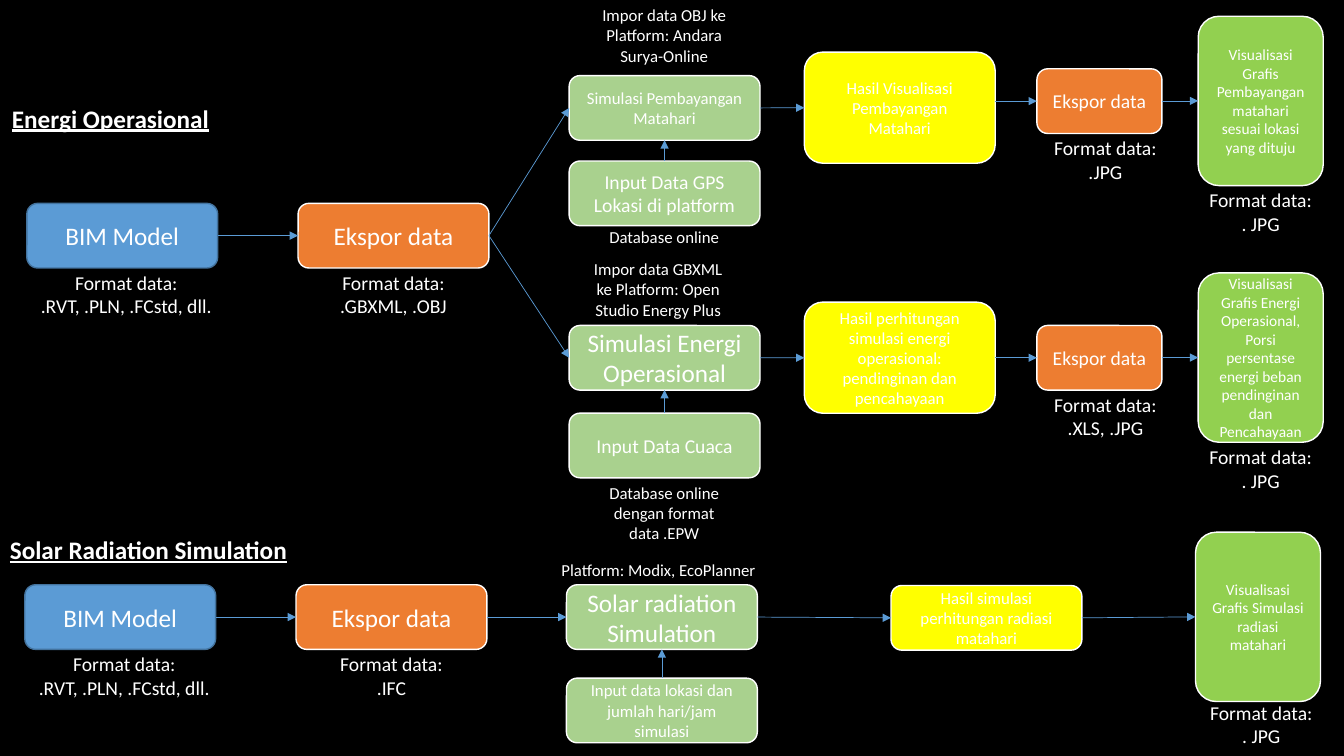
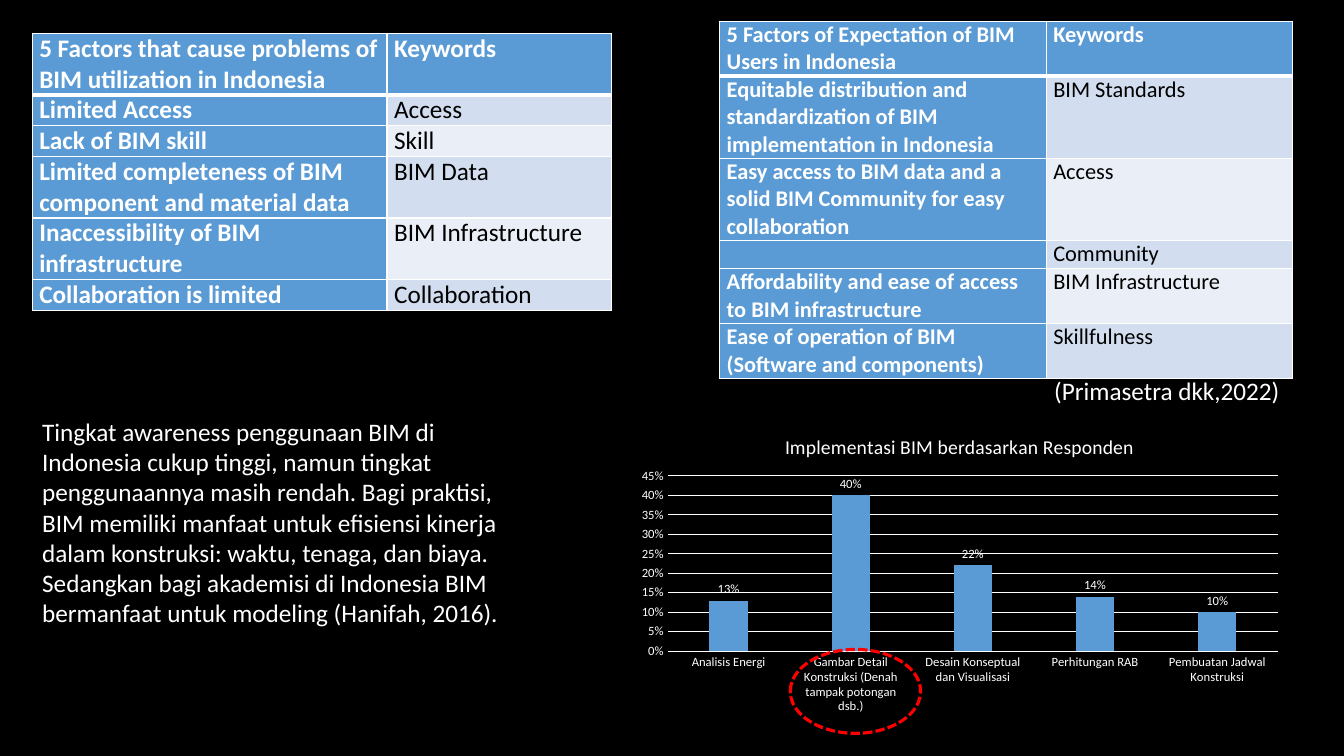
from lxml import etree
from pptx import Presentation
from pptx import util as u
from pptx.chart import data as chart_data
from pptx.dml import color
from pptx.enum import chart as charts, dml, shapes, text
from pptx.oxml import ns

WHITE, BLACK, RED = "FFFFFF", "000000", "FF0000"
BLUE, NAVY, ORANGE, YELLOW = "5B9BD5", "43739E", "ED7D31", "FFFF00"
SAGE, LIME = "A9D18E", "92D050"
BANDS = ("D2DEEF", "EAEFF7")
FONT = "Calibri"
BOX_W, BOX_H, SMALL_W = 14.2, 8.55, 9.3
TOP, LEFT, BOTTOM, RIGHT = range(4)


def rgb(code):
    return color.RGBColor.from_string(code)


def format_font(font, size, ink=WHITE, bold=False, underline=False):
    font.name, font.size, font.bold = FONT, u.Pt(size), bold
    font.color.rgb = rgb(ink)
    if underline:
        font.underline = True


def write(frame, words, size=18, align=None, **style):
    frame.text = ""
    for number, line in enumerate(words.split("\n")):
        paragraph = frame.add_paragraph() if number else frame.paragraphs[0]
        paragraph.alignment = align
        run = paragraph.add_run()
        run.text = line
        format_font(run.font, size, **style)


class Deck:
    """Black slides whose lengths are percent shares of the slide's width and height."""

    def __init__(self):
        self.show = Presentation()
        self.show.slide_width, self.show.slide_height = u.Inches(13.33), u.Inches(7.5)
        self.slide = None

    def new_slide(self):
        self.slide = self.show.slides.add_slide(self.show.slide_layouts[6])
        self.slide.background.fill.solid()
        self.slide.background.fill.fore_color.rgb = rgb(BLACK)

    def across(self, share):
        return round(self.show.slide_width * share / 100)

    def down(self, share):
        return round(self.show.slide_height * share / 100)

    def area(self, x, y, w, h):
        return self.across(x), self.down(y), self.across(w), self.down(h)

    def outline(self, kind, area, fill, line, width):
        shape = self.slide.shapes.add_shape(kind, *self.area(*area))
        shape.shadow.inherit = False
        if fill:
            shape.fill.solid()
            shape.fill.fore_color.rgb = rgb(fill)
        else:
            shape.fill.background()
        shape.line.color.rgb = rgb(line)
        shape.line.width = u.Pt(width)
        return shape

    def box(self, words, x, y, fill, size=18, w=BOX_W, h=BOX_H):
        line = NAVY if fill == BLUE else WHITE
        shape = self.outline(shapes.MSO_SHAPE.ROUNDED_RECTANGLE, (x, y, w, h), fill, line, 1)
        shape.text_frame.vertical_anchor = text.MSO_ANCHOR.MIDDLE
        write(shape.text_frame, words, size, text.PP_ALIGN.CENTER)
        return shape

    def label(self, words, x, y, w, h, wrap=True, **style):
        frame = self.slide.shapes.add_textbox(*self.area(x, y, w, h)).text_frame
        frame.word_wrap = wrap
        write(frame, words, **style)

    def note(self, words, x, y, w=11.85, h=9.5):
        self.label(words, x, y, w, h, size=12, align=text.PP_ALIGN.CENTER)

    def file_format(self, box, kinds, shift=0, lift=0.3):
        x, w = box.left / self.across(1), box.width / self.across(1)
        y = (box.top + box.height) / self.down(1)
        self.label("Format data:\n" + kinds, x + shift, y - lift, w, 7.6, wrap=False,
                   size=14, align=text.PP_ALIGN.CENTER)

    def arrow(self, source, target, leave=RIGHT, enter=LEFT, level=False):
        line = self.slide.shapes.add_connector(shapes.MSO_CONNECTOR.STRAIGHT, 0, 0, 0, 0)
        line.end_connect(target, enter)
        if level:
            line.begin_x, line.begin_y = source.left + source.width, line.end_y
        else:
            line.begin_connect(source, leave)
        line.line.color.rgb = rgb(BLUE)
        line.line.width = u.Pt(0.5)
        etree.SubElement(line.line._get_or_add_ln(), ns.qn("a:tailEnd"), type="triangle")
        etree.SubElement(line._element.spPr, ns.qn("a:effectLst"))

    def chain(self, *boxes):
        for source, target in zip(boxes, boxes[1:]):
            self.arrow(source, target)

    def table(self, rows, x, y, widths, row_h, size):
        height = row_h * sum(row[0] for row in rows)
        grid = self.slide.shapes.add_table(len(rows), 2, *self.area(x, y, sum(widths), height)).table
        grid.first_col = True
        for column, width in zip(grid.columns, widths):
            column.width = self.across(width)
        for i, (lines, *entries) in enumerate(rows):
            grid.rows[i].height = self.down(row_h * lines)
            for j, words in enumerate(entries):
                cell = grid.cell(i, j)
                strong = i == 0 or j == 0
                cell.margin_left = cell.margin_right = u.Inches(0.07)
                cell.margin_top = cell.margin_bottom = 0
                cell.fill.solid()
                cell.fill.fore_color.rgb = rgb(BLUE if strong else BANDS[(i - 1) % 2])
                write(cell.text_frame, words, size, ink=WHITE if strong else BLACK, bold=strong)
                if i == 0:
                    edge = etree.Element(ns.qn("a:lnB"), w=str(u.Pt(3)))
                    cell._tc.get_or_add_tcPr().insert(0, edge)
                    paint = etree.SubElement(edge, ns.qn("a:solidFill"))
                    etree.SubElement(paint, ns.qn("a:srgbClr"), val=WHITE)

    def bar_chart(self, title, values, area, plot):
        source = chart_data.CategoryChartData(number_format="0%")
        source.categories = list(values)
        source.add_series("Series 1", list(values.values()))
        kind = charts.XL_CHART_TYPE.COLUMN_CLUSTERED
        chart = self.slide.shapes.add_chart(kind, *self.area(*area), source).chart
        format_font(chart.font, 10)
        chart.has_legend = False
        write(chart.chart_title.text_frame, title, 14)
        for axis in (chart.category_axis, chart.value_axis):
            axis.major_tick_mark = axis.minor_tick_mark = charts.XL_TICK_MARK.NONE
            format_font(axis.tick_labels.font, 9)
        shares = chart.value_axis
        shares.minimum_scale, shares.maximum_scale, shares.major_unit = 0, 0.45, 0.05
        shares.tick_labels.number_format = "0%"
        shares.tick_labels.number_format_is_linked = False
        shares.format.line.fill.background()
        for line in (chart.category_axis.format.line, shares.major_gridlines.format.line):
            line.color.rgb = rgb(WHITE)
            line.width = u.Pt(0.75)
        bars = chart.plots[0]
        bars.gap_width, bars.overlap, bars.vary_by_categories = 219, -27, False
        bars.series[0].format.fill.solid()
        bars.series[0].format.fill.fore_color.rgb = rgb(BLUE)
        bars.has_data_labels = True
        labels = bars.data_labels
        labels.show_value = True
        labels.number_format, labels.number_format_is_linked = "0%", False
        labels.position = charts.XL_LABEL_POSITION.OUTSIDE_END
        format_font(labels.font, 9)
        plot_area = chart._chartSpace.chart.plotArea
        for old in plot_area.findall(ns.qn("c:layout")):
            plot_area.remove(old)
        layout = etree.Element(ns.qn("c:layout"))
        plot_area.insert(0, layout)
        manual = etree.SubElement(layout, ns.qn("c:manualLayout"))
        parts = dict(layoutTarget="inner", xMode="edge", yMode="edge", **dict(zip("xywh", plot)))
        for tag, value in parts.items():
            etree.SubElement(manual, ns.qn("c:" + tag), val=str(value))


def start_of_flow(deck, x, y, export_kinds):
    model = deck.box("BIM Model", x, y, BLUE)
    export = deck.box("Ekspor data", x + 20.18, y, ORANGE)
    deck.file_format(model, ".RVT, .PLN, .FCstd, dll.", shift=0.3)
    deck.file_format(export, export_kinds)
    deck.chain(model, export)
    return export


def simulation(deck, x, y, words, size, feed, feed_size, feed_y):
    step = deck.box(words, x, y, SAGE, size)
    feed_box = deck.box(feed, x, feed_y, SAGE, feed_size)
    deck.arrow(feed_box, step, TOP, BOTTOM)
    return step


def final_view(deck, words, x, y, shift=0, lift=0.3):
    view = deck.box(words, x, y, LIME, 11, SMALL_W, 22.4)
    deck.file_format(view, ". JPG", shift, lift)
    return view


def branch(deck, export, step, result, result_y, kinds, export_y, view, view_y):
    outcome = deck.box(result, 59.85, result_y, YELLOW, 12, h=14.7)
    saved = deck.box("Ekspor data", 77.15, export_y, ORANGE, 14, SMALL_W)
    deck.file_format(saved, kinds, shift=0.45)
    shown = final_view(deck, view, 89.15, view_y)
    deck.chain(export, step, outcome)
    deck.arrow(outcome, saved, level=True)
    deck.arrow(saved, shown, level=True)


def workflow_slide(deck):
    deck.new_slide()
    heading = dict(wrap=False, bold=True, underline=True)
    deck.label("Energi Operasional", 0.15, 12.95, 16.3, 5.3, **heading)
    export = start_of_flow(deck, 2, 26.9, ".GBXML, .OBJ")
    shading = simulation(deck, 42.35, 10, "Simulasi Pembayangan Matahari", 12,
                         "Input Data GPS Lokasi di platform", 14, 21.3)
    branch(deck, export, shading, "Hasil Visualisasi Pembayangan Matahari", 6.9, ".JPG", 9.1,
           "Visualisasi Grafis Pembayangan matahari sesuai lokasi yang dituju", 2.15)
    deck.note("Impor data OBJ ke Platform: Andara Surya-Online", 43.5, 0)
    deck.note("Database online", 43.5, 29.35, h=4)
    energy = simulation(deck, 42.35, 43.05, "Simulasi Energi Operasional", 18,
                        "Input Data Cuaca", 14, 54.65)
    branch(deck, export, energy,
           "Hasil perhitungan simulasi energi operasional: pendinginan dan pencahayaan", 39.97,
           ".XLS, .JPG", 43.05, "Visualisasi Grafis Energi Operasional, Porsi persentase "
           "energi beban pendinginan dan Pencahayaan", 36.1)
    deck.note("Impor data GBXML ke Platform: Open Studio Energy Plus", 43.05, 33.6)
    deck.note("Database online dengan format data .EPW", 43.5, 63.2)
    deck.label("Solar Radiation Simulation", 0, 70, 22.3, 5.3, **heading)
    export = start_of_flow(deck, 1.85, 77.35, ".IFC")
    radiation = simulation(deck, 42.15, 77.35, "Solar radiation Simulation", 18,
                           "Input data lokasi dan jumlah hari/jam simulasi", 12, 89.7)
    deck.note("Platform: Modix, EcoPlanner", 39, 73.45, 20, 4)
    outcome = deck.box("Hasil simulasi perhitungan radiasi matahari", 66.3, 77.45, YELLOW, 12)
    shown = final_view(deck, "Visualisasi Grafis Simulasi radiasi matahari", 88.95, 70.4, 0.25, 0.8)
    deck.chain(export, radiation, outcome, shown)


def survey_slide(deck):
    deck.new_slide()
    deck.table([
        (2, "5 Factors that cause problems of BIM utilization in Indonesia", "Keywords"),
        (1, "Limited Access", "Access"),
        (1, "Lack of BIM skill", "Skill"),
        (2, "Limited completeness of BIM component and material data", "BIM Data"),
        (2, "Inaccessibility of BIM infrastructure", "BIM Infrastructure"),
        (1, "Collaboration is limited", "Collaboration"),
    ], 2.4, 4.4, (26.4, 16.7), 4, 18)
    deck.table([
        (2, "5 Factors of Expectation of BIM Users in Indonesia", "Keywords"),
        (3, "Equitable distribution and standardization of BIM implementation in Indonesia",
         "BIM Standards"),
        (3, "Easy access to BIM data and a solid BIM Community for easy collaboration", "Access"),
        (1, "", "Community"),
        (2, "Affordability and ease of access to BIM infrastructure", "BIM Infrastructure"),
        (2, "Ease of operation of BIM (Software and components)", "Skillfulness"),
    ], 53.55, 2.8, (24.3, 18.3), 3.56, 16)
    deck.label("(Primasetra dkk,2022)", 77.7, 49.05, 18.45, 5.3, wrap=False)
    deck.bar_chart("Implementasi BIM berdasarkan Responden", {
        "Analisis Energi": 0.13,
        "Gambar Detail Konstruksi (Denah tampak potongan dsb.)": 0.4,
        "Desain Konseptual dan Visualisasi": 0.22,
        "Perhitungan RAB": 0.14,
        "Pembuatan Jadwal Konstruksi": 0.1,
    }, (46.7, 55.35, 49.4, 40), (0.06, 0.19, 0.92, 0.58))
    deck.label("Tingkat awareness penggunaan BIM di Indonesia cukup tinggi, namun tingkat "
               "penggunaannya masih rendah. Bagi praktisi, BIM memiliki manfaat untuk efisiensi "
               "kinerja dalam konstruksi: waktu, tenaga, dan biaya. Sedangkan bagi akademisi di "
               "Indonesia BIM bermanfaat untuk modeling (Hanifah, 2016).", 2.4, 54.4, 37.6, 29.6)
    ring = deck.outline(shapes.MSO_SHAPE.OVAL, (58.8, 85.9, 9.7, 11.1), None, RED, 2.25)
    ring.line.dash_style = dml.MSO_LINE.SQUARE_DOT


def main():
    deck = Deck()
    workflow_slide(deck)
    survey_slide(deck)
    deck.show.save("out.pptx")


if __name__ == "__main__":
    main()
